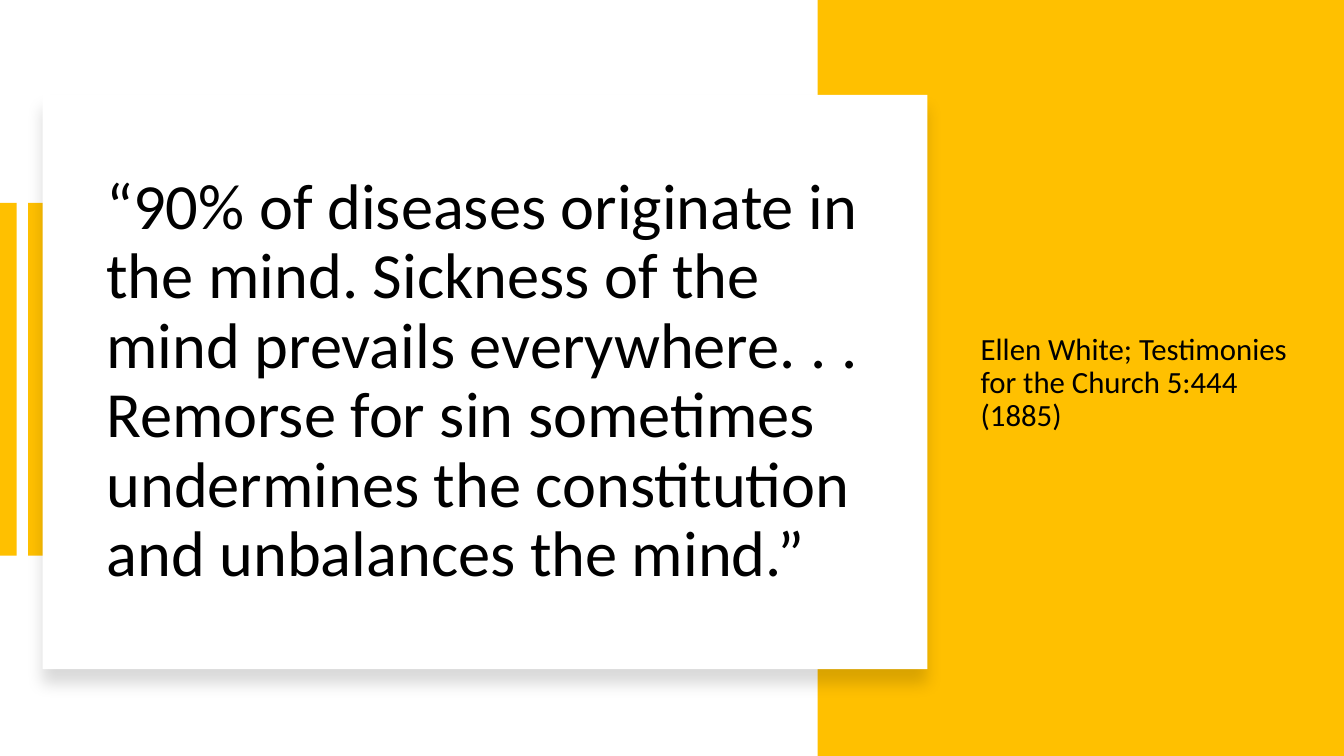
from dataclasses import dataclass

import lxml.etree
import pptx
import pptx.dml.color
import pptx.enum.shapes
import pptx.enum.text
import pptx.oxml.ns
import pptx.util

Pt = pptx.util.Pt
RGB = pptx.dml.color.RGBColor


@dataclass(frozen=True)
class Theme:
    accent: RGB = RGB(0xFF, 0xC0, 0x00)
    paper: RGB = RGB(0xFF, 0xFF, 0xFF)
    ink: RGB = RGB(0x00, 0x00, 0x00)
    font: str = "Calibri"
    quote_size: int = 46
    source_size: int = 22


THEME = Theme()
SLIDE_WIDTH, SLIDE_HEIGHT = 960, 540

QUOTE = (
    "“90% of diseases originate in the mind. Sickness of the mind prevails "
    "everywhere. . . Remorse for sin sometimes undermines the constitution "
    "and unbalances the mind.”"
)
SOURCE = "Ellen White; Testimonies for the Church 5:444 (1885)"


def add_block(slide, box, colour):
    block = slide.shapes.add_shape(
        pptx.enum.shapes.MSO_SHAPE.RECTANGLE, *map(Pt, box))
    block.fill.solid()
    block.fill.fore_color.rgb = colour
    block.line.fill.background()
    block.shadow.inherit = False
    return block


def add_words(slide, box, words, size, space_before=0):
    holder = slide.shapes.add_textbox(*map(Pt, box))
    frame = holder.text_frame
    frame.word_wrap = True
    frame.vertical_anchor = pptx.enum.text.MSO_ANCHOR.MIDDLE
    frame.text = words
    paragraph = frame.paragraphs[0]
    paragraph.line_spacing = 0.9
    paragraph.space_before = Pt(space_before)
    font = paragraph.runs[0].font
    font.name = THEME.font
    font.size = Pt(size)
    font.color.rgb = THEME.ink


def cast_shadow(card, blur, distance, opacity):
    """Soft shadow falling straight down."""
    qn = pptx.oxml.ns.qn
    effects = card.element.spPr.find(qn("a:effectLst"))
    shadow = lxml.etree.SubElement(
        effects, qn("a:outerShdw"), blurRad=str(Pt(blur)), dist=str(Pt(distance)),
        dir=str(90 * 60000), algn="t", rotWithShape="0")
    colour = lxml.etree.SubElement(shadow, qn("a:srgbClr"), val=str(THEME.ink))
    lxml.etree.SubElement(colour, qn("a:alpha"), val=str(opacity * 1000))


def add_edge_bars(slide, left, top, width, height):
    """Two upright bars, one at each side of the box."""
    bar_width = 12
    for bar_left in (left, left + width - bar_width):
        add_block(slide, (bar_left, top, bar_width, height), THEME.accent)


def add_source_panel(slide, left, top, width, height):
    add_block(slide, (left, top, width, height), THEME.accent)
    source_box = (left + 109.4, top + 145.4, 236.2, 257)
    add_words(slide, source_box, SOURCE, THEME.source_size, space_before=10)


def add_quote_card(slide, left, top, width, height):
    card = add_block(slide, (left, top, width, height), THEME.paper)
    cast_shadow(card, blur=11, distance=10, opacity=15)
    margin_x, margin_y = 38.5, 47.5
    quote_box = (left + margin_x, top + margin_y,
                 width - 2 * margin_x + 4.5, height - 2 * margin_y)
    add_words(slide, quote_box, QUOTE, THEME.quote_size)


def main():
    deck = pptx.Presentation()
    deck.slide_width, deck.slide_height = Pt(SLIDE_WIDTH), Pt(SLIDE_HEIGHT)
    slide = deck.slides.add_slide(deck.slide_layouts[6])

    # Coloured backdrop, with the attribution on the right
    add_edge_bars(slide, 0, 145, 32, 252)
    add_source_panel(slide, 584, 0, SLIDE_WIDTH - 584, SLIDE_HEIGHT)

    # Quotation on top, overlapping both
    add_quote_card(slide, 30.5, 67.8, 632, 410.2)

    deck.save("out.pptx")


if __name__ == "__main__":
    main()
